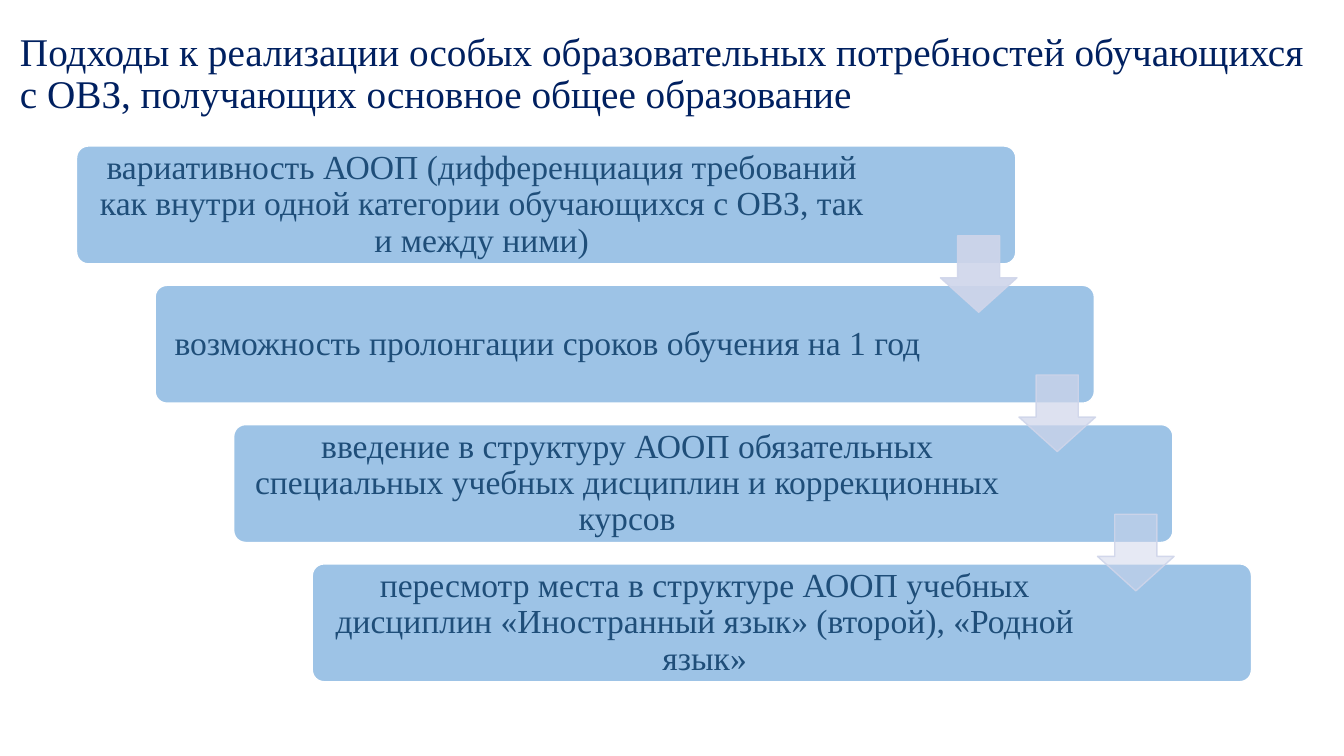
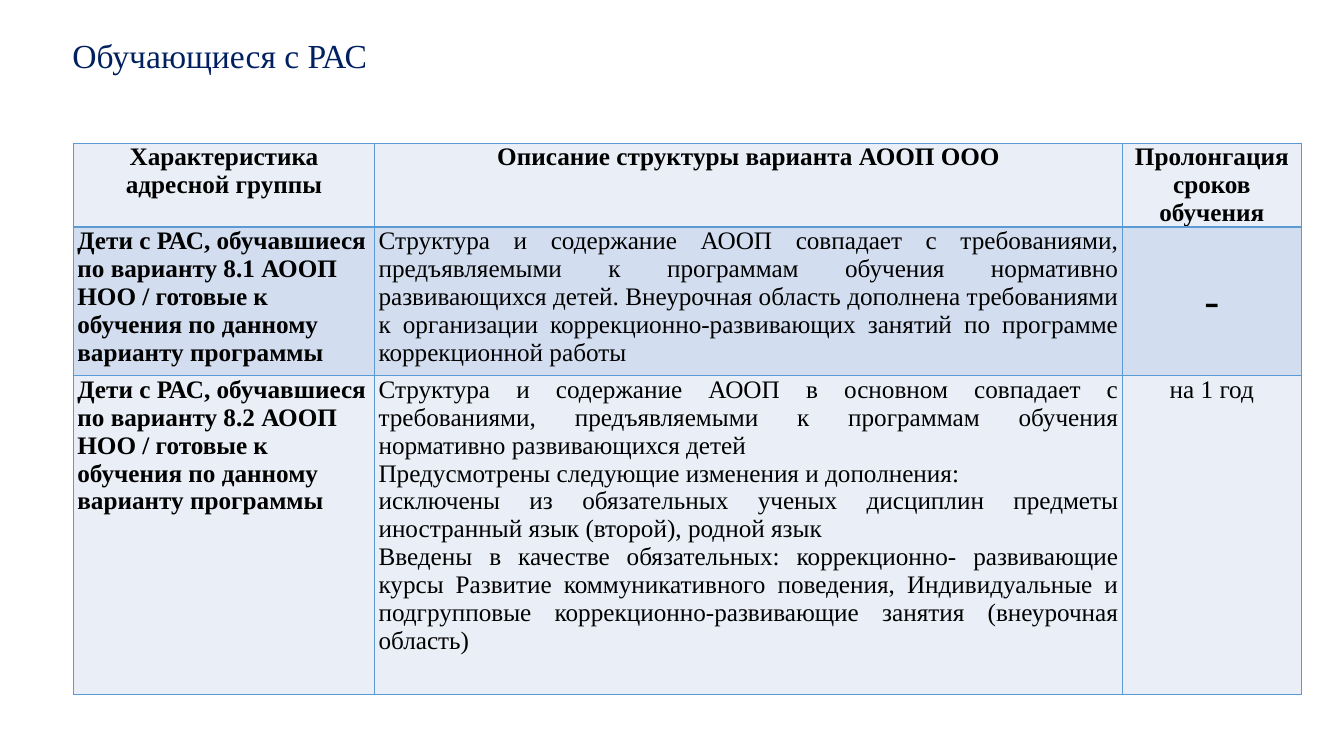
from dataclasses import dataclass

from lxml.etree import SubElement
from pptx import Presentation
from pptx.dml.color import RGBColor
from pptx.enum.shapes import MSO_SHAPE
from pptx.enum.text import MSO_ANCHOR, MSO_AUTO_SIZE, PP_ALIGN
from pptx.oxml.ns import qn
from pptx.util import Cm, Pt

# Shared look
FONT = "Times New Roman"
COLORS = {
    "title": "002060",
    "step": "9DC3E6",
    "step_line": "FFFFFF",
    "step_text": "1F4E79",
    "arrow": "CFD5EA",
    "cell_text": "000000",
    "border": "5B9BD5",
    "light_row": "EAEFF7",
    "dark_row": "D2DEEF",
}

# Staircase geometry in cm
STEP_LEFT, STEP_TOP = 1.93, 3.68
STEP_WIDTH, STEP_HEIGHT = 23.67, 2.97
SHIFT_X, SHIFT_Y = 1.98, 3.51
ARROW_DX, ARROW_DY, ARROW_SIZE = 21.77, 2.26, 1.93

# Table geometry in cm
TABLE_LEFT, TABLE_TOP = 1.85, 3.61
COLUMN_WIDTHS = (7.59, 18.85, 4.5)
ROW_HEIGHTS = (2.11, 3.75, 8.03)


@dataclass(frozen=True)
class Step:
    text: str
    right_inset: float


@dataclass(frozen=True)
class Entry:
    paragraphs: tuple[str, ...]
    align: PP_ALIGN = PP_ALIGN.CENTER
    bold: bool = False
    size: int = 18
    anchor: MSO_ANCHOR = MSO_ANCHOR.TOP


def heading(text: str) -> Entry:
    return Entry((text,), bold=True)


def group(text: str) -> Entry:
    return Entry((text,), PP_ALIGN.LEFT, bold=True)


def description(*paragraphs: str) -> Entry:
    return Entry(paragraphs, PP_ALIGN.JUSTIFY)


STEPS = (
    Step("вариативность АООП (дифференциация требований как внутри одной "
         "категории обучающихся с ОВЗ, так и между ними)", 3.51),
    Step("возможность пролонгации сроков обучения на 1 год", 4.15),
    Step("введение в структуру АООП обязательных специальных учебных "
         "дисциплин и коррекционных курсов", 4.1),
    Step("пересмотр места в структуре АООП учебных дисциплин "
         "«Иностранный язык» (второй), «Родной язык»", 4.15),
)
ARROW_OPACITIES = (90, 70, 50)
ARROW_LINE_OPACITY = 90

VARIANTS = (
    (
        heading("Характеристика адресной группы"),
        heading("Описание структуры варианта АООП ООО"),
        heading("Пролонгация сроков обучения"),
    ),
    (
        group("Дети с РАС, обучавшиеся по варианту 8.1 АООП НОО / готовые к "
              "обучения по данному варианту программы"),
        description(
            "Структура и содержание АООП совпадает с требованиями, "
            "предъявляемыми к программам обучения нормативно развивающихся "
            "детей. Внеурочная область дополнена требованиями к организации "
            "коррекционно-развивающих занятий по программе коррекционной "
            "работы"),
        Entry(("-",), size=32, anchor=MSO_ANCHOR.MIDDLE),
    ),
    (
        group("Дети с РАС, обучавшиеся по варианту 8.2 АООП НОО / готовые к "
              "обучения по данному варианту программы"),
        description(
            "Структура и содержание АООП в основном совпадает с "
            "требованиями, предъявляемыми к программам обучения нормативно "
            "развивающихся детей",
            "Предусмотрены следующие изменения и дополнения:",
            "исключены из обязательных ученых дисциплин предметы иностранный "
            "язык (второй), родной язык",
            "Введены в качестве обязательных: коррекционно- развивающие "
            "курсы Развитие коммуникативного поведения, Индивидуальные и "
            "подгрупповые коррекционно-развивающие занятия (внеурочная "
            "область)"),
        Entry(("на 1 год",)),
    ),
)


def rgb(name: str) -> RGBColor:
    return RGBColor.from_string(COLORS[name])


def add_run(paragraph, text: str, size: int, color: str, bold: bool = False) -> None:
    run = paragraph.add_run()
    run.text = text
    run.font.name = FONT
    run.font.size = Pt(size)
    run.font.bold = bold
    run.font.color.rgb = rgb(color)


def add_titled_slide(deck, text: str, size: int, left: float, top: float,
                     width: float, height: float):
    slide = deck.slides.add_slide(deck.slide_layouts[5])
    title = slide.shapes.title
    title.left, title.top = Cm(left), Cm(top)
    title.width, title.height = Cm(width), Cm(height)
    frame = title.text_frame
    frame.auto_size = MSO_AUTO_SIZE.NONE
    frame.vertical_anchor = MSO_ANCHOR.MIDDLE
    line = frame.paragraphs[0]
    line.alignment = PP_ALIGN.LEFT
    line.line_spacing = 0.9
    add_run(line, text, size, "title")
    return slide


def add_filled_shape(slide, preset: MSO_SHAPE, left: float, top: float,
                     width: float, height: float, fill: str, line: str):
    shape = slide.shapes.add_shape(preset, Cm(left), Cm(top), Cm(width), Cm(height))
    shape.shadow.inherit = False
    shape.fill.solid()
    shape.fill.fore_color.rgb = rgb(fill)
    shape.line.color.rgb = rgb(line)
    shape.line.width = Pt(1)
    return shape


def add_step(slide, index: int, step: Step) -> None:
    box = add_filled_shape(
        slide, MSO_SHAPE.ROUNDED_RECTANGLE,
        STEP_LEFT + index * SHIFT_X, STEP_TOP + index * SHIFT_Y,
        STEP_WIDTH, STEP_HEIGHT, "step", "step_line")
    box.adjustments[0] = 0.1
    frame = box.text_frame
    frame.word_wrap = True
    frame.vertical_anchor = MSO_ANCHOR.MIDDLE
    frame.margin_left, frame.margin_right = Cm(0.26), Cm(step.right_inset)
    frame.margin_top = frame.margin_bottom = Cm(0.05)
    line = frame.paragraphs[0]
    line.alignment = PP_ALIGN.CENTER
    line.line_spacing = 0.9
    add_run(line, step.text, 24, "step_text")


def add_arrow(slide, index: int, opacity: int) -> None:
    arrow = add_filled_shape(
        slide, MSO_SHAPE.DOWN_ARROW,
        STEP_LEFT + ARROW_DX + index * SHIFT_X,
        STEP_TOP + ARROW_DY + index * SHIFT_Y,
        ARROW_SIZE, ARROW_SIZE, "arrow", "arrow")
    arrow.adjustments[0], arrow.adjustments[1] = 0.55, 0.45
    # Fill colour comes first, line colour second
    tints = arrow.element.spPr.iter(qn("a:srgbClr"))
    for tint, percent in zip(list(tints), (opacity, ARROW_LINE_OPACITY)):
        SubElement(tint, qn("a:alpha"), val=str(percent * 1000))


def add_borders(cell) -> None:
    properties = cell._tc.get_or_add_tcPr()
    for side in ("a:lnL", "a:lnR", "a:lnT", "a:lnB"):
        border = SubElement(properties, qn(side), w=str(Pt(1)))
        fill = SubElement(border, qn("a:solidFill"))
        SubElement(fill, qn("a:srgbClr"), val=COLORS["border"])


def fill_cell(cell, entry: Entry, background: str) -> None:
    add_borders(cell)
    cell.fill.solid()
    cell.fill.fore_color.rgb = rgb(background)
    cell.margin_left = cell.margin_right = Cm(0.1)
    cell.margin_top = cell.margin_bottom = Cm(0)
    cell.vertical_anchor = entry.anchor
    frame = cell.text_frame
    for index, text in enumerate(entry.paragraphs):
        paragraph = frame.add_paragraph() if index else frame.paragraphs[0]
        paragraph.alignment = entry.align
        add_run(paragraph, text, entry.size, "cell_text", entry.bold)


def add_variants_table(slide) -> None:
    table = slide.shapes.add_table(
        len(ROW_HEIGHTS), len(COLUMN_WIDTHS), Cm(TABLE_LEFT), Cm(TABLE_TOP),
        Cm(sum(COLUMN_WIDTHS)), Cm(sum(ROW_HEIGHTS))).table
    table.first_row = table.horz_banding = False
    for column, width in zip(table.columns, COLUMN_WIDTHS):
        column.width = Cm(width)
    for index, (row, height, entries) in enumerate(
            zip(table.rows, ROW_HEIGHTS, VARIANTS)):
        row.height = Cm(height)
        background = "dark_row" if index % 2 else "light_row"
        for cell, entry in zip(row.cells, entries):
            fill_cell(cell, entry, background)


def main() -> None:
    deck = Presentation()
    deck.slide_width, deck.slide_height = Cm(33.87), Cm(19.05)

    # Approaches as a descending staircase
    approaches = add_titled_slide(
        deck,
        "Подходы к реализации особых образовательных потребностей "
        "обучающихся с ОВЗ, получающих основное общее образование",
        28, 0.25, 0.94, 33.32, 1.88)
    for index, step in enumerate(STEPS):
        add_step(approaches, index, step)
    for index, opacity in enumerate(ARROW_OPACITIES):
        add_arrow(approaches, index, opacity)

    # Programme variants
    variants = add_titled_slide(
        deck, "Обучающиеся с РАС", 24, 1.57, 0, 29.21, 2.92)
    add_variants_table(variants)

    deck.save("out.pptx")


if __name__ == "__main__":
    main()
